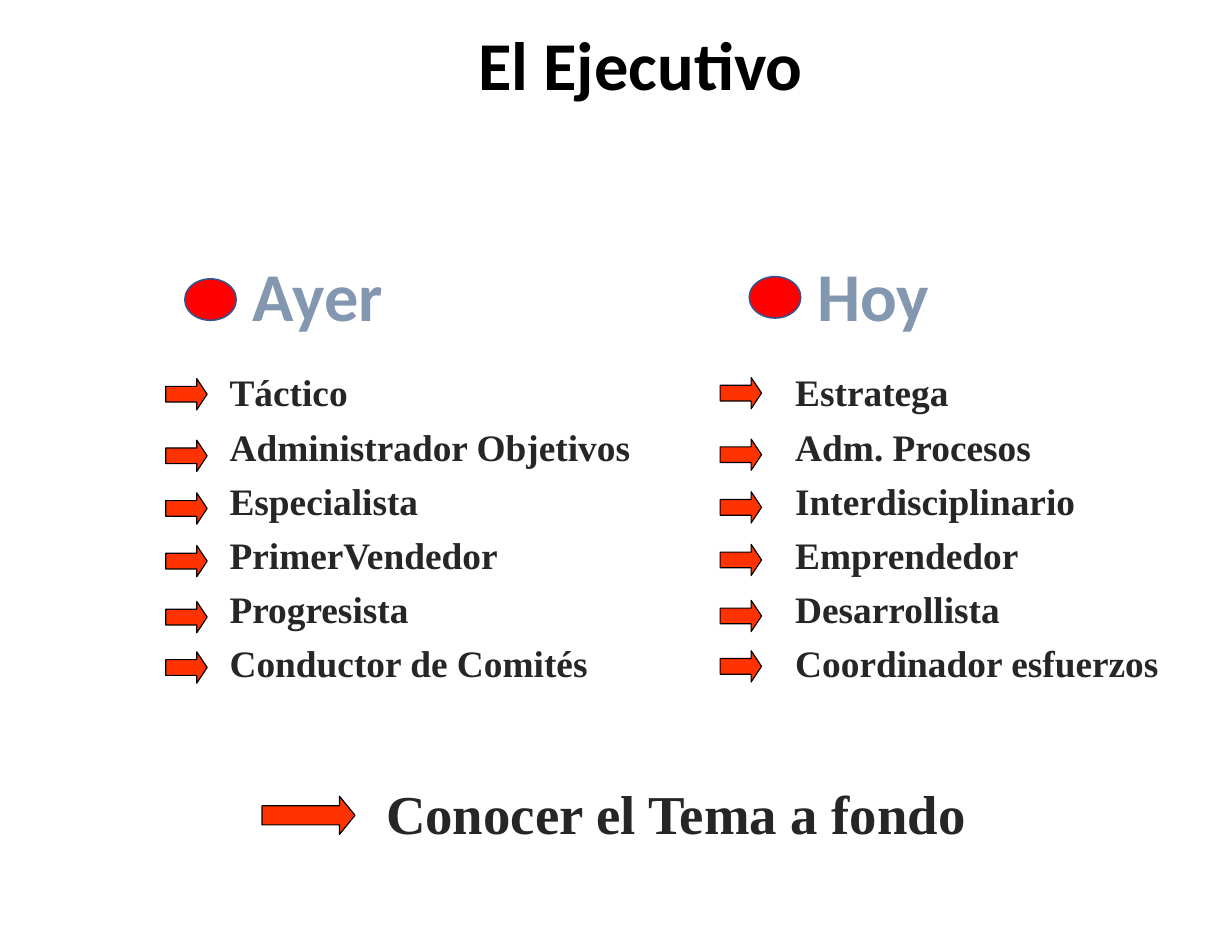
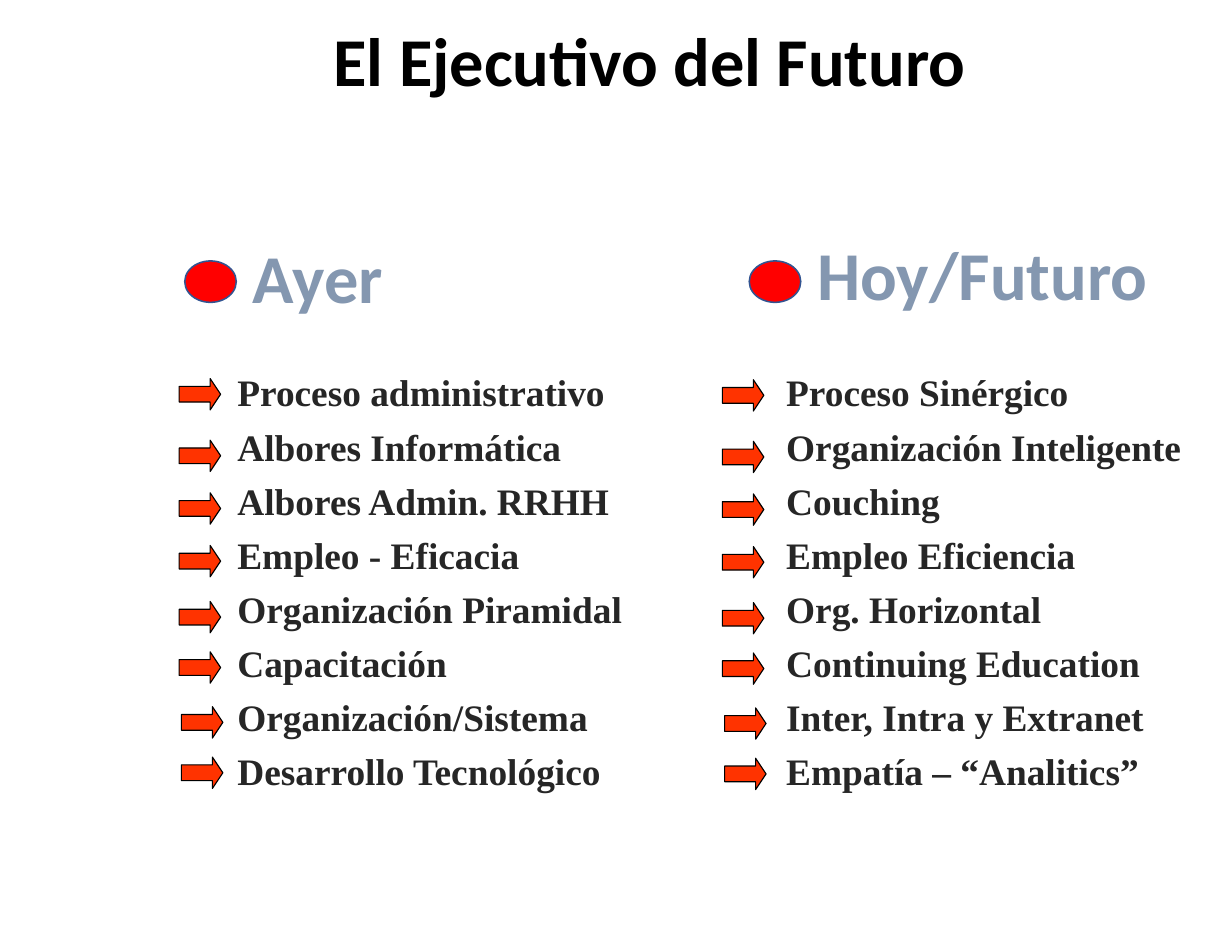
from pptx import Presentation
from pptx.dml.color import RGBColor
from pptx.enum.shapes import MSO_SHAPE as Preset
from pptx.util import Inches, Pt

BLACK = RGBColor(0x00, 0x00, 0x00)
TEXT = RGBColor(0x26, 0x26, 0x26)
HEADING = RGBColor(0x84, 0x97, 0xB0)
ARROW = RGBColor(0xFF, 0x33, 0x00)
DOT = RGBColor(0xFF, 0x00, 0x00)
DOT_LINE = RGBColor(0x32, 0x54, 0x91)

SANS, SERIF = "Calibri", "Times New Roman"
HEADING_LEFTS = (2.16, 7.2)
DOT_LEFTS = (1.65, 6.69)
LIST_TOP = 3.24
# Arrow tops of the list rows; the last two rows sit slightly to the right
ARROW_TOPS = (3.38, 3.93, 4.4, 4.87, 5.37, 5.82, 6.31, 6.76)
SHIFTED_ROW, ROW_SHIFT = 6, 0.02


class Deck:
    """Holds the shared style and the current slide."""

    def __init__(self):
        self.presentation = Presentation()
        self.presentation.slide_width = Inches(11)
        self.presentation.slide_height = Inches(8.5)
        self.slide = None

    def add_slide(self):
        self.slide = self.presentation.slides.add_slide(self.presentation.slide_layouts[6])

    def text(self, lines, left, top, width, height, size, font, color, wrap=False):
        box = self.slide.shapes.add_textbox(
            Inches(left), Inches(top), Inches(width), Inches(height))
        frame = box.text_frame
        frame.word_wrap = wrap
        frame.text = "\n".join(lines)
        for paragraph in frame.paragraphs:
            paragraph.font.size = Pt(size)
            paragraph.font.name = font
            paragraph.font.bold = True
            paragraph.font.color.rgb = color
        return frame

    def title(self, title, left, top, width):
        self.text([title], left, top, width, 0.84, 44, SANS, BLACK)

    def heading(self, heading, left, top, width):
        self.text([heading], left, top, width, 0.84, 44, SANS, HEADING)

    def items(self, lines, left, width, height):
        frame = self.text(lines, left, LIST_TOP, width, height, 24, SERIF, TEXT, wrap=True)
        frame.margin_left = frame.margin_right = Inches(0.11)
        frame.margin_top = frame.margin_bottom = Inches(0.06)
        for index, paragraph in enumerate(frame.paragraphs):
            properties = paragraph._p.get_or_add_pPr()
            properties.set("marL", str(Inches(0.41)))
            properties.set("indent", str(Inches(-0.41)))
            if index:
                paragraph.space_before = Pt(6)

    def shape(self, preset, left, top, width, height, fill, line, line_width):
        shape = self.slide.shapes.add_shape(
            preset, Inches(left), Inches(top), Inches(width), Inches(height))
        shape.shadow.inherit = False
        shape.fill.solid()
        shape.fill.fore_color.rgb = fill
        shape.line.color.rgb = line
        shape.line.width = Pt(line_width)
        return shape

    def dot(self, left, top):
        self.shape(Preset.OVAL, left, top, 0.46, 0.37, DOT, DOT_LINE, 1)

    def arrow(self, left, top, width=0.37, height=0.28, head=0.333):
        arrow = self.shape(Preset.RIGHT_ARROW, left, top, width, height, ARROW, BLACK, 0.75)
        arrow.adjustments[1] = head

    def arrow_column(self, left, count, offset=0):
        for row, top in enumerate(ARROW_TOPS[:count]):
            self.arrow(left + (ROW_SHIFT if row >= SHIFTED_ROW else 0), top + offset)

    def comparison(self, columns, list_height):
        for column, heading_left, dot_left in zip(columns, HEADING_LEFTS, DOT_LEFTS):
            name, heading_top, heading_width = column["heading"]
            self.heading(name, heading_left, heading_top, heading_width)
            self.dot(dot_left, column["dot_top"])
            list_left, list_width = column["list"]
            self.items(column["items"], list_left, list_width, list_height)
            arrow_left, offset = column["arrows"]
            self.arrow_column(arrow_left, len(column["items"]), offset)


EXECUTIVE = (
    {"heading": ("Ayer", 2.21, 1.37), "dot_top": 2.49,
     "list": (1.94, 4.4), "arrows": (1.48, 0),
     "items": ("Táctico", "Administrador Objetivos", "Especialista",
               "PrimerVendedor", "Progresista", "Conductor de Comités")},
    {"heading": ("Hoy", 2.21, 1.21), "dot_top": 2.47,
     "list": (6.99, 3.62), "arrows": (6.43, -0.01),
     "items": ("Estratega", "Adm. Procesos", "Interdisciplinario",
               "Emprendedor", "Desarrollista", "Coordinador esfuerzos")},
)

FUTURE_EXECUTIVE = (
    {"heading": ("Ayer", 2.05, 1.37), "dot_top": 2.33,
     "list": (2.01, 4.4), "arrows": (1.6, 0),
     "items": ("Proceso administrativo", "Albores Informática",
               "Albores Admin. RRHH", "Empleo - Eficacia",
               "Organización Piramidal", "Capacitación",
               "Organización/Sistema", "Desarrollo Tecnológico")},
    {"heading": ("Hoy/Futuro", 2.02, 3.18), "dot_top": 2.33,
     "list": (6.91, 4.02), "arrows": (6.45, 0.01),
     "items": ("Proceso Sinérgico", "Organización Inteligente", "Couching",
               "Empleo Eficiencia", "Org. Horizontal", "Continuing Education",
               "Inter, Intra y Extranet", "Empatía – “Analitics”")},
)


def main():
    deck = Deck()

    # Executive: yesterday and today, with a closing line
    deck.add_slide()
    deck.title("El Ejecutivo", 4.17, 0.15, 3.14)
    deck.comparison(EXECUTIVE, 3.39)
    deck.arrow(2.34, 7.11, 0.83, 0.34, 0.406)
    deck.text(["Conocer el Tema a fondo"], 3.35, 6.91, 5.43, 0.69, 35.2, SERIF, TEXT)

    # Executive of the future
    deck.add_slide()
    deck.title("El Ejecutivo del Futuro", 2.88, 0.11, 5.91)
    deck.comparison(FUTURE_EXECUTIVE, 4.4)

    deck.presentation.save("out.pptx")


if __name__ == "__main__":
    main()
